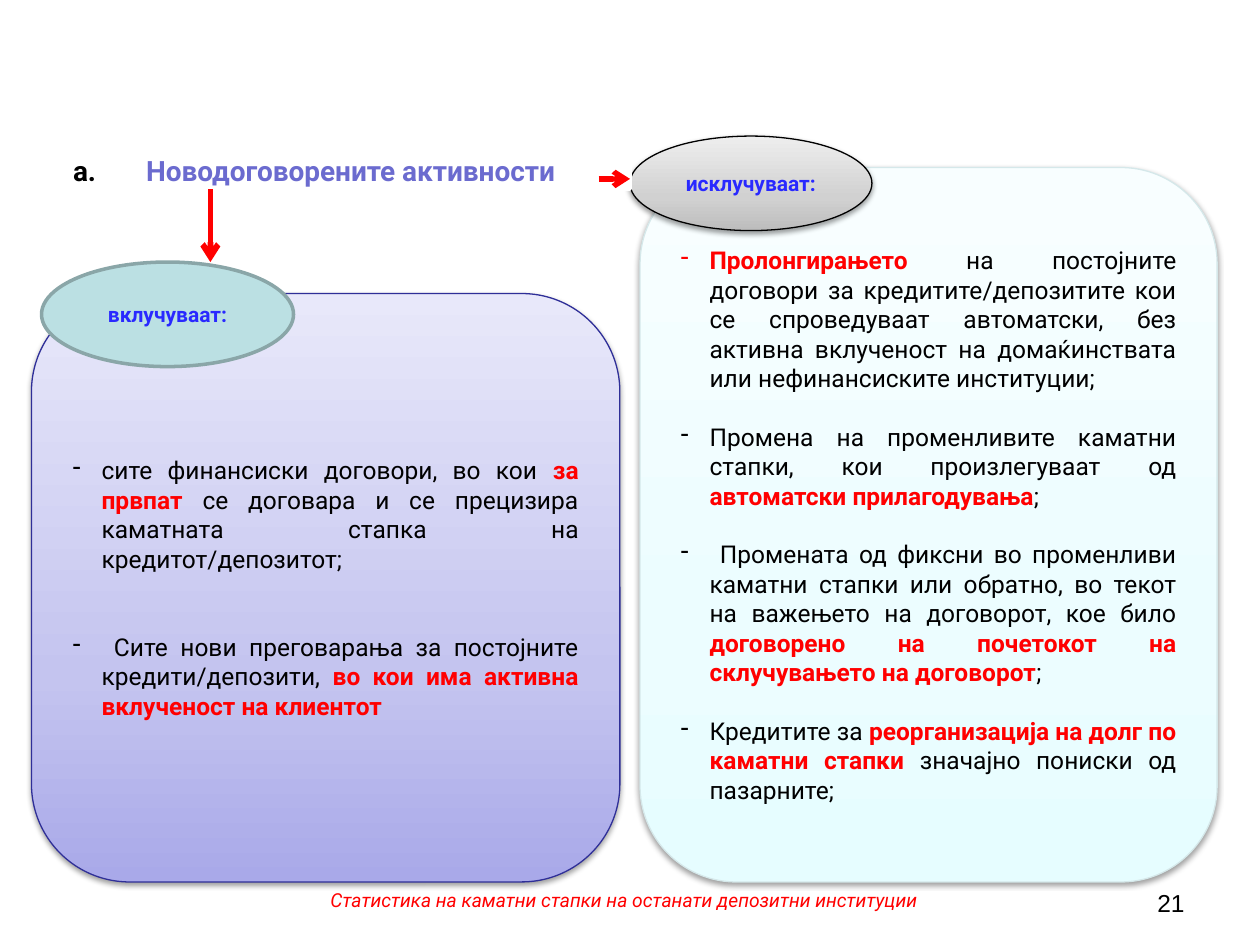
from lxml.etree import SubElement
from pptx import Presentation
from pptx.dml.color import RGBColor
from pptx.enum.shapes import MSO_CONNECTOR, MSO_SHAPE
from pptx.enum.text import MSO_ANCHOR, MSO_AUTO_SIZE, PP_ALIGN
from pptx.oxml.ns import qn
from pptx.util import Inches, Pt

COLORS = {
    "black": "000000", "white": "FFFFFF", "red": "FF0000",
    "label": "2929FF", "heading": "6B6BCF",
    "teal": "BBE0E3", "teal_edge": "8AA6A8",
    "violet_edge": "2F2F98", "aqua_edge": "D5E8EA",
}
# Gradient stops run from bottom to top
VIOLET = [(0, "A9A9E9"), (35, "C4C4EF"), (100, "E8E8FA")]
AQUA = [(0, "E6FDFF"), (35, "ECFDFF"), (100, "F8FEFF")]
GREY = [(0, "BDBDBD"), (35, "D1D1D1"), (100, "EEEEEE")]
LINE_GAP = 16.8  # height of one 14 pt text line, in points

# Each item is a list of (text, emphasised) runs
INCLUDED = [
    [("сите финансиски договори, во кои ", False), ("за првпат ", True),
     ("се договара и се прецизира каматната стапка на кредитот/депозитот;", False)],
    [(" Сите нови преговарања за постојните кредити/депозити, ", False),
     ("во кои има активна вклученост на клиентот", True)],
]
EXCLUDED = [
    [("Пролонгирањето", True),
     (" на постојните договори за кредитите/депозитите кои се спроведуваат "
      "автоматски, без активна вклученост на домаќинствата или "
      "нефинансиските институции;", False)],
    [("Промена на променливите каматни стапки, кои произлегуваат од ", False),
     ("автоматски прилагодувања", True), (";", False)],
    [(" Промената од фиксни во променливи каматни стапки или обратно, во "
      "текот на важењето на договорот, кое било ", False),
     ("договорено на почетокот на склучувањето на договорот", True), (";", False)],
    [("Кредитите за ", False),
     ("реорганизација на долг по каматни стапки ", True),
     ("значајно пониски од пазарните;", False)],
]


def rgb(name):
    return RGBColor.from_string(COLORS[name])


def add_run(paragraph, text, size, color, bold=False, italic=False, font="Roboto"):
    run = paragraph.add_run()
    run.text = text
    run.font.name = font
    run.font.size = Pt(size)
    run.font.bold = bold
    run.font.italic = italic
    run.font.color.rgb = rgb(color)


def set_hanging(paragraph, indent):
    props = paragraph._p.get_or_add_pPr()
    props.set("marL", str(Inches(indent)))
    props.set("indent", str(-Inches(indent)))
    return props


def set_gradient(shape, stops):
    shape.fill.gradient()
    gradient = shape._element.spPr.find(qn("a:gradFill"))
    for child in list(gradient):
        gradient.remove(child)
    stop_list = SubElement(gradient, qn("a:gsLst"))
    for position, color in stops:
        stop = SubElement(stop_list, qn("a:gs"), pos=str(position * 1000))
        SubElement(stop, qn("a:srgbClr"), val=color)
    SubElement(gradient, qn("a:lin"), ang=str(270 * 60000), scaled="0")


def add_shadow(shape):
    effects = shape._element.spPr.find(qn("a:effectLst"))
    shadow = SubElement(effects, qn("a:outerShdw"), blurRad=str(Pt(3.1)),
                        dist=str(Pt(1.6)), dir=str(90 * 60000), rotWithShape="0")
    color = SubElement(shadow, qn("a:srgbClr"), val=COLORS["black"])
    SubElement(color, qn("a:alpha"), val="38000")


def add_panel(slide, kind, box, fill, edge, edge_width):
    """Shape with a solid colour name or a list of gradient stops as fill."""
    shape = slide.shapes.add_shape(kind, *map(Inches, box))
    shape.shadow.inherit = False
    if isinstance(fill, list):
        set_gradient(shape, fill)
        add_shadow(shape)
    else:
        shape.fill.solid()
        shape.fill.fore_color.rgb = rgb(fill)
    shape.line.color.rgb = rgb(edge)
    shape.line.width = Pt(edge_width)
    shape.text_frame.word_wrap = True
    shape.text_frame.vertical_anchor = MSO_ANCHOR.MIDDLE
    return shape


def add_list_panel(slide, box, fill, edge, items, gap):
    frame = add_panel(slide, MSO_SHAPE.ROUNDED_RECTANGLE, box, fill, edge, 0.75).text_frame
    for index, item in enumerate(items):
        paragraph = frame.add_paragraph() if index else frame.paragraphs[0]
        SubElement(set_hanging(paragraph, 0.23), qn("a:buChar"), char="-")
        paragraph.alignment = PP_ALIGN.JUSTIFY
        if index:
            paragraph.space_before = Pt(gap)
        for text, strong in item:
            add_run(paragraph, text, 14, "red" if strong else "black", bold=strong)


def add_oval_label(slide, box, fill, edge, edge_width, text):
    oval = add_panel(slide, MSO_SHAPE.OVAL, box, fill, edge, edge_width)
    paragraph = oval.text_frame.paragraphs[0]
    paragraph.alignment = PP_ALIGN.CENTER
    add_run(paragraph, text, 12, "label", bold=True)


def format_heading(shape, box, text, color):
    shape.left, shape.top, shape.width, shape.height = map(Inches, box)
    shape.fill.solid()
    shape.fill.fore_color.rgb = rgb("white")
    shape.line.color.rgb = rgb("white")
    shape.line.width = Pt(2)
    frame = shape.text_frame
    frame.auto_size = MSO_AUTO_SIZE.NONE
    frame.word_wrap = True
    frame.vertical_anchor = MSO_ANCHOR.TOP
    frame.margin_left = Inches(0.16)
    paragraph = frame.paragraphs[0]
    set_hanging(paragraph, 0.38)
    paragraph.alignment = PP_ALIGN.JUSTIFY
    add_run(paragraph, text, 16, color, bold=True)


def add_arrow(slide, start, end, width):
    arrow = slide.shapes.add_connector(MSO_CONNECTOR.STRAIGHT,
                                       *map(Inches, start + end))
    arrow.line.color.rgb = rgb("red")
    arrow.line.width = Pt(width)
    SubElement(arrow.line._get_or_add_ln(), qn("a:tailEnd"), type="arrow")
    SubElement(arrow._element.spPr, qn("a:effectLst"))


def add_footer(slide, box, align, text, **style):
    frame = slide.shapes.add_textbox(*map(Inches, box)).text_frame
    frame.word_wrap = True
    frame.paragraphs[0].alignment = align
    add_run(frame.paragraphs[0], text, **style)


def main():
    prs = Presentation()
    prs.slide_width, prs.slide_height = Inches(10), Inches(7.5)
    slide = prs.slides.add_slide(prs.slide_layouts[5])

    # Footer
    add_footer(slide, (7.17, 7, 2.33, 0.35), PP_ALIGN.RIGHT, "21",
               size=14, color="black", font="Arial")
    add_footer(slide, (0.83, 7, 8.25, 0.35), PP_ALIGN.CENTER,
               "Статистика на каматни стапки на останати депозитни институции",
               size=11, color="red", italic=True)

    # What is included
    add_list_panel(slide, (0.25, 2.33, 4.67, 4.67), VIOLET, "violet_edge",
                   INCLUDED, 2 * LINE_GAP)
    add_oval_label(slide, (0.33, 2.08, 2, 0.83), "teal", "teal_edge", 2, "вклучуваат:")

    # What is excluded
    add_list_panel(slide, (5.08, 1.33, 4.58, 5.67), AQUA, "aqua_edge",
                   EXCLUDED, LINE_GAP)
    add_oval_label(slide, (5, 1.08, 1.92, 0.75), GREY, "black", 0.75, "исклучуваат:")

    # Heading, brought in front of the panels, and its letter
    title = slide.shapes.title
    slide.shapes._spTree.append(title._element)
    format_heading(title, (1, 1.17, 4, 0.33), "Новодоговорените активности", "heading")
    add_arrow(slide, (4.75, 1.42), (5, 1.42), 3)
    add_arrow(slide, (1.67, 1.5), (1.67, 2.08), 3.25)
    letter = slide.shapes.add_textbox(0, 0, 0, 0)
    format_heading(letter, (0.42, 1.17, 0.5, 0.33), "а.", "black")

    prs.save("out.pptx")


if __name__ == "__main__":
    main()
